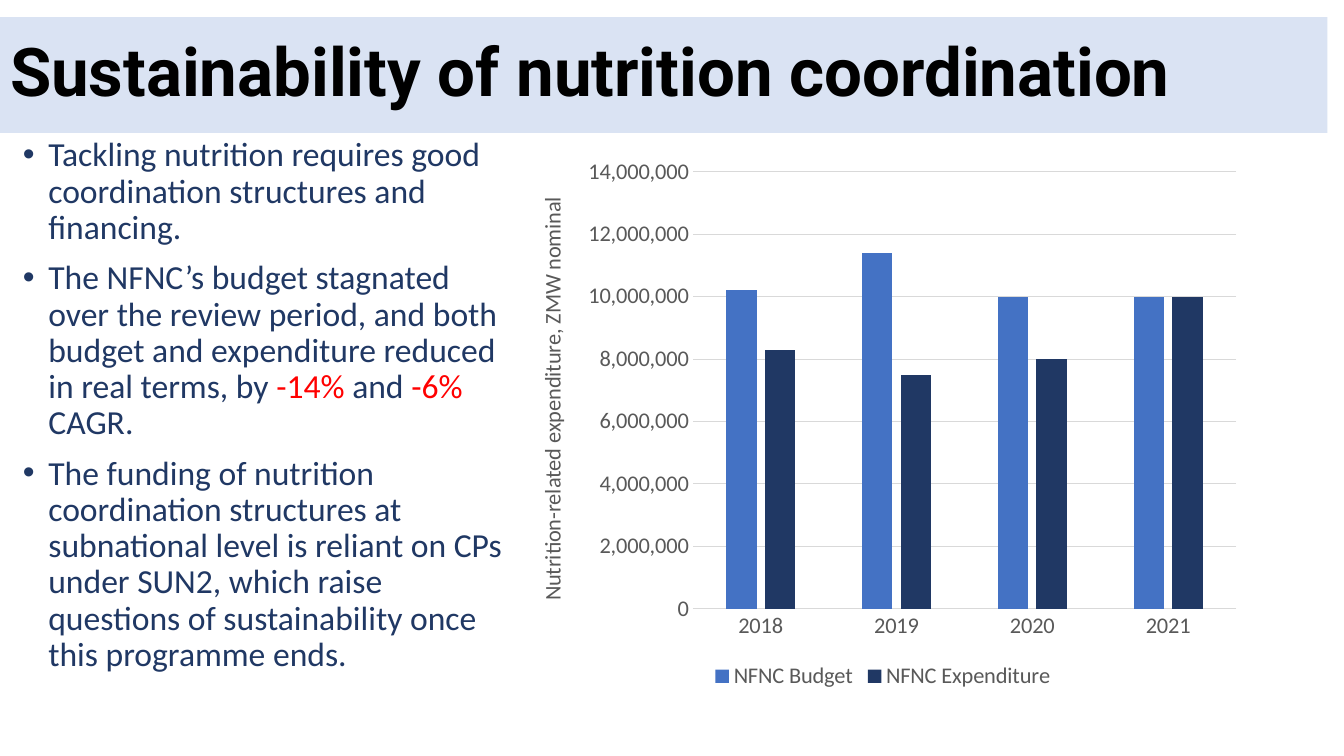
from lxml.etree import SubElement
from pptx import Presentation
from pptx.chart.data import CategoryChartData
from pptx.dml.color import RGBColor
from pptx.enum.chart import XL_CHART_TYPE as CHART, XL_LEGEND_POSITION as LEGEND, XL_TICK_MARK as TICK
from pptx.enum.text import MSO_ANCHOR as ANCHOR, MSO_AUTO_SIZE as FIT, PP_ALIGN as ALIGN
from pptx.oxml.ns import qn
from pptx.util import Cm, Pt

NAVY, BLUE, RED, GREY, RULE, BAND = "203864", "4472C4", "FF0000", "595959", "D9D9D9", "DAE3F3"


def paint(color, value):
    color.rgb = RGBColor.from_string(value)


def fill(target, value):
    target.fill.solid()
    paint(target.fill.fore_color, value)


def style(font, size=24, color=NAVY, name="Calibri", bold=False):
    font.size, font.name, font.bold = Pt(size), name, bold
    paint(font.color, color)


def add_run(p, text, **fmt):
    r = p.add_run()
    r.text = text
    style(r.font, **fmt)


class Deck:
    def __init__(self, width, height):
        self.prs = Presentation()
        self.prs.slide_width, self.prs.slide_height = Cm(width), Cm(height)
        self.slide = self.prs.slides.add_slide(self.prs.slide_layouts[5])

    def title(self, box, text):
        sp = self.slide.shapes.title
        sp.left, sp.top, sp.width, sp.height = map(Cm, box)
        fill(sp, BAND)
        tf = sp.text_frame
        tf.auto_size, tf.vertical_anchor = FIT.NONE, ANCHOR.MIDDLE
        p = tf.paragraphs[0]
        p.alignment, p.line_spacing = ALIGN.LEFT, 0.9
        add_run(p, text, size=48, color="000000", name="Roboto", bold=True)

    def bullets(self, box, items):
        tf = self.slide.shapes.add_textbox(*map(Cm, box)).text_frame
        tf.word_wrap = True
        for i, parts in enumerate(items):
            p = tf.add_paragraph() if i else tf.paragraphs[0]
            p.line_spacing, p.space_before = 0.9, Pt(10)
            pPr = p._p.get_or_add_pPr()
            pPr.set("marL", str(Cm(0.64)))
            pPr.set("indent", str(Cm(-0.64)))
            SubElement(pPr, qn("a:buFont"), typeface="Arial")
            SubElement(pPr, qn("a:buChar"), char="•")
            for text, color in parts:
                add_run(p, text, color=color)

    def columns(self, box, cats, series, axis_title):
        data = CategoryChartData(number_format="#,##0")
        data.categories = cats
        for name, values, _ in series:
            data.add_series(name, values)
        chart = self.slide.shapes.add_chart(CHART.COLUMN_CLUSTERED, *map(Cm, box), data).chart
        style(chart.font, 16, GREY)
        chart.has_title = False
        chart.has_legend = True
        chart.legend.position = LEGEND.BOTTOM
        chart.legend.include_in_layout = False
        style(chart.legend.font, 16, GREY)

        plot = chart.plots[0]
        plot.gap_width, plot.overlap, plot.vary_by_categories = 219, -27, False
        for s, (_, _, color) in zip(plot.series, series):
            fill(s.format, color)
            s.invert_if_negative = False

        cat, val = chart.category_axis, chart.value_axis
        for axis in (cat, val):
            axis.major_tick_mark = axis.minor_tick_mark = TICK.NONE
            style(axis.tick_labels.font, 16, GREY)
        val.minimum_scale, val.maximum_scale, val.major_unit = 0, 14000000, 2000000
        val.has_major_gridlines = True
        for line in (cat.format.line, val.major_gridlines.format.line):
            line.width = Pt(0.75)
            paint(line.color, RULE)
        val.format.line.fill.background()
        val.tick_labels.number_format = "#,##0"
        val.tick_labels.number_format_is_linked = False
        add_run(val.axis_title.text_frame.paragraphs[0], axis_title, size=16, color=GREY)


def main():
    deck = Deck(33.87, 19.05)
    deck.title((0, 0.43, 33.45, 2.92), "Sustainability of nutrition coordination")
    deck.bullets((0.33, 3.35, 12.65, 13.79), [
        [("Tackling nutrition requires good coordination structures and financing.", NAVY)],
        [("The NFNC’s budget stagnated over the review period, and both budget and "
          "expenditure reduced in real terms, by ", NAVY),
         ("-14%", RED), (" and ", NAVY), ("-6%", RED), (" CAGR.", NAVY)],
        [("The funding of nutrition coordination structures at subnational level is reliant "
          "on CPs under SUN2, which raise questions of sustainability once this programme ends.", NAVY)],
    ])
    deck.columns((12.98, 3.71, 18.54, 13.79), ["2018", "2019", "2020", "2021"], [
        ("NFNC Budget", (10200000, 11400000, 10000000, 10000000), BLUE),
        ("NFNC Expenditure", (8300000, 7500000, 8000000, 10000000), NAVY),
    ], "Nutrition-related expenditure, ZMW nominal")
    deck.prs.save("out.pptx")


if __name__ == "__main__":
    main()
